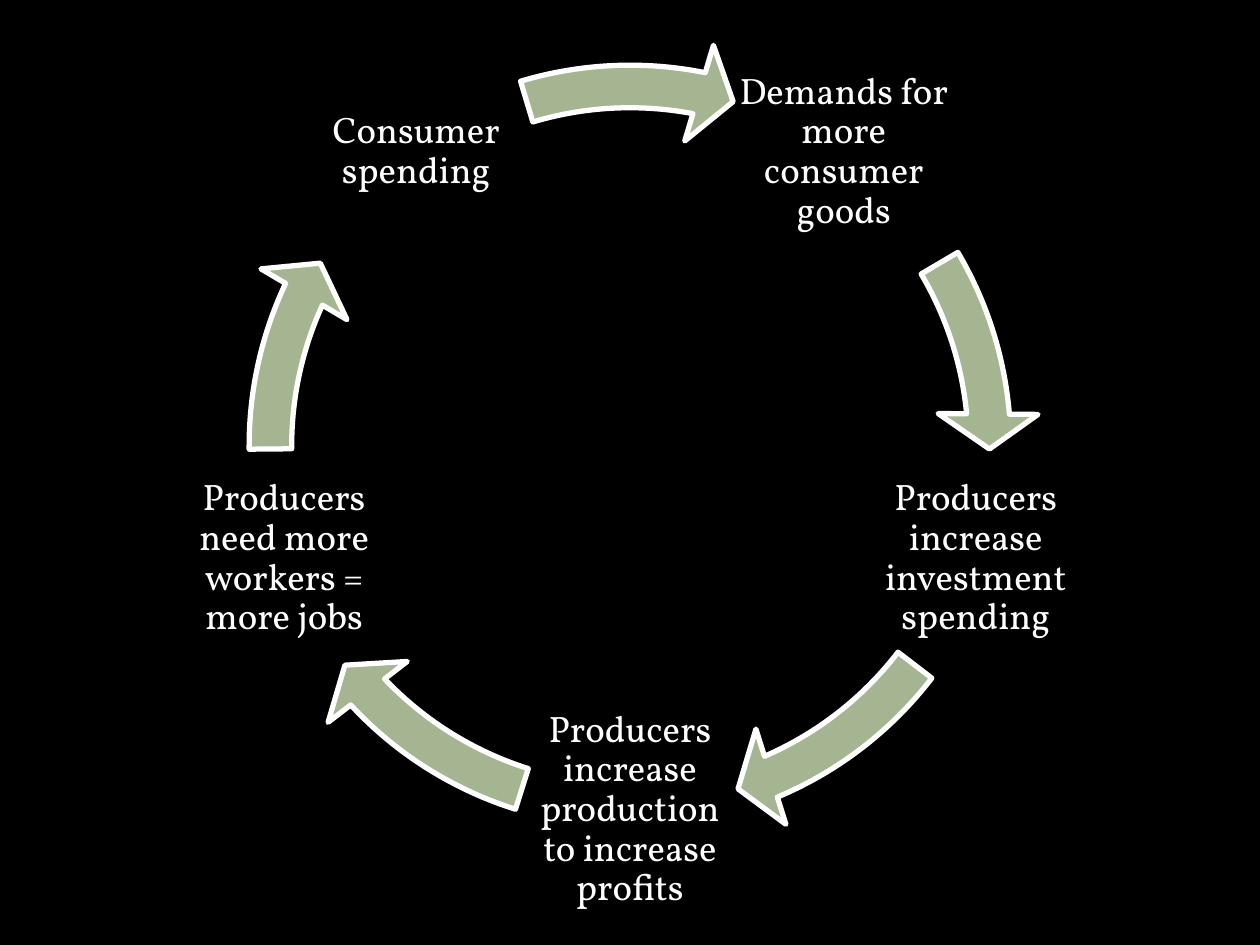
from dataclasses import dataclass
from math import cos, radians, sin

from pptx import Presentation
from pptx.dml.color import RGBColor
from pptx.enum.shapes import MSO_SHAPE as Shape
from pptx.enum.text import MSO_ANCHOR as Anchor, PP_ALIGN as Align
from pptx.shapes.shapetree import GroupShapes as Shapes
from pptx.util import Pt

BLACK = RGBColor(0x00, 0x00, 0x00)
WHITE = RGBColor(0xFF, 0xFF, 0xFF)
GREEN = RGBColor(0xA5, 0xB5, 0x92)
FONT = "Vollkorn"

MID_X, MID_Y = 360, 254.88
ORBIT = 207.8
BOX = 124.56
RING = 468
PAD = 2.1
DEGREE = 0.6
BAND, HEAD, TIP = 0.052, 5.6, 0.061


@dataclass
class Step:
    text: str
    start: float
    end: float


STEPS = [
    Step("Demands for more consumer goods", 329.44, 354.89),
    Step("Producers increase investment spending", 37.56, 66.91),
    Step("Producers increase production to increase profits", 107.49, 136.84),
    Step("Producers need more workers = more jobs", 179.52, 204.96),
    Step("Consumer spending", 253.31, 281.09),
]


def add_label(shapes: Shapes, text: str, angle: float) -> None:
    left = MID_X + ORBIT * cos(radians(angle)) - BOX / 2
    top = MID_Y + ORBIT * sin(radians(angle)) - BOX / 2
    box = shapes.add_textbox(Pt(left), Pt(top), Pt(BOX), Pt(BOX))
    frame = box.text_frame
    frame.word_wrap = True
    frame.vertical_anchor = Anchor.MIDDLE
    frame.margin_left = frame.margin_right = Pt(PAD)
    frame.margin_top = frame.margin_bottom = Pt(PAD)
    para = frame.paragraphs[0]
    para.alignment = Align.CENTER
    para.line_spacing = 0.9
    run = para.add_run()
    run.text = text
    run.font.name = FONT
    run.font.size = Pt(21)
    run.font.color.rgb = WHITE


def add_arrow(shapes: Shapes, start: float, end: float) -> None:
    arrow = shapes.add_shape(
        Shape.CIRCULAR_ARROW,
        Pt(MID_X - RING / 2), Pt(MID_Y - RING / 2), Pt(RING), Pt(RING),
    )
    values = (BAND, HEAD * DEGREE, end * DEGREE, start * DEGREE, TIP)
    for index, value in enumerate(values):
        arrow.adjustments[index] = value
    arrow.shadow.inherit = False
    arrow.fill.solid()
    arrow.fill.fore_color.rgb = GREEN
    arrow.line.color.rgb = WHITE
    arrow.line.width = Pt(3)


def main() -> None:
    deck = Presentation()
    deck.slide_width, deck.slide_height = Pt(720), Pt(540)
    slide = deck.slides.add_slide(deck.slide_layouts[6])
    slide.background.fill.solid()
    slide.background.fill.fore_color.rgb = BLACK
    cycle = slide.shapes.add_group_shape().shapes
    for index, step in enumerate(STEPS):
        add_label(cycle, step.text, -54 + index * 360 / len(STEPS))
        add_arrow(cycle, step.start, step.end)
    deck.save("out.pptx")


if __name__ == "__main__":
    main()
